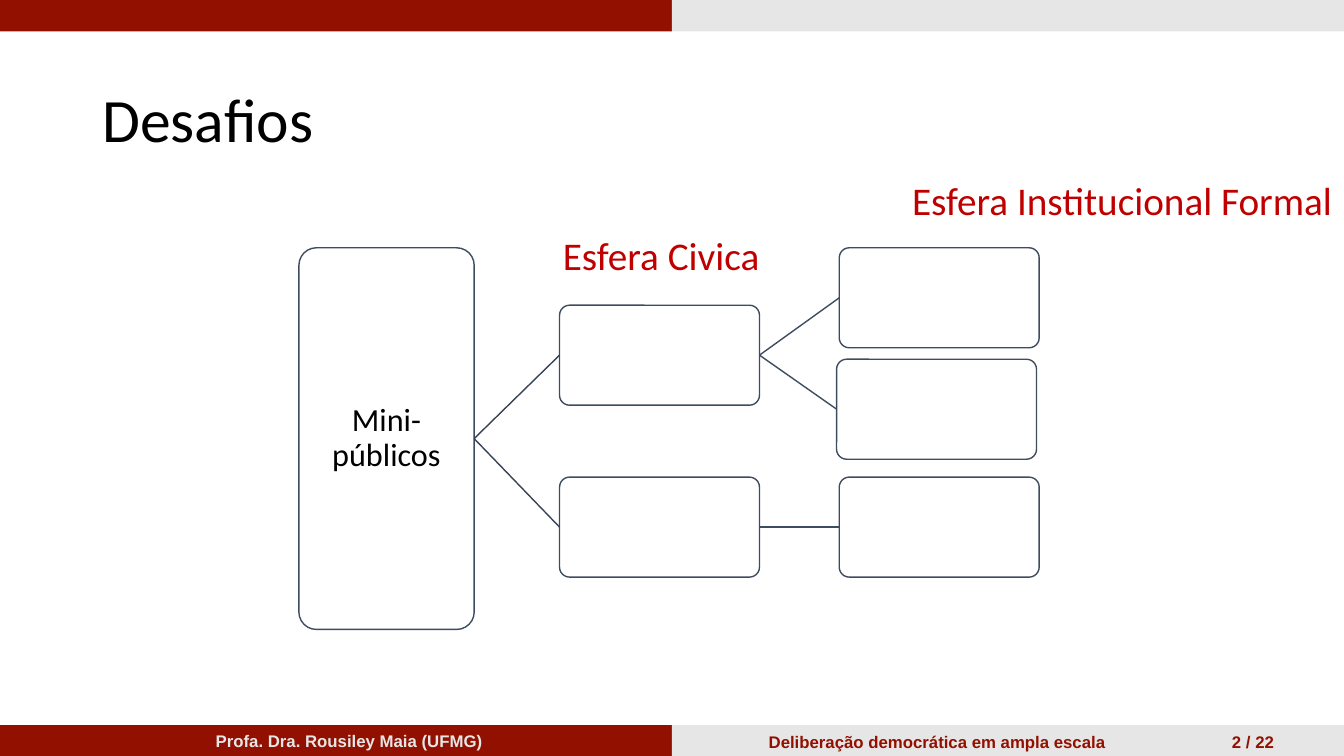
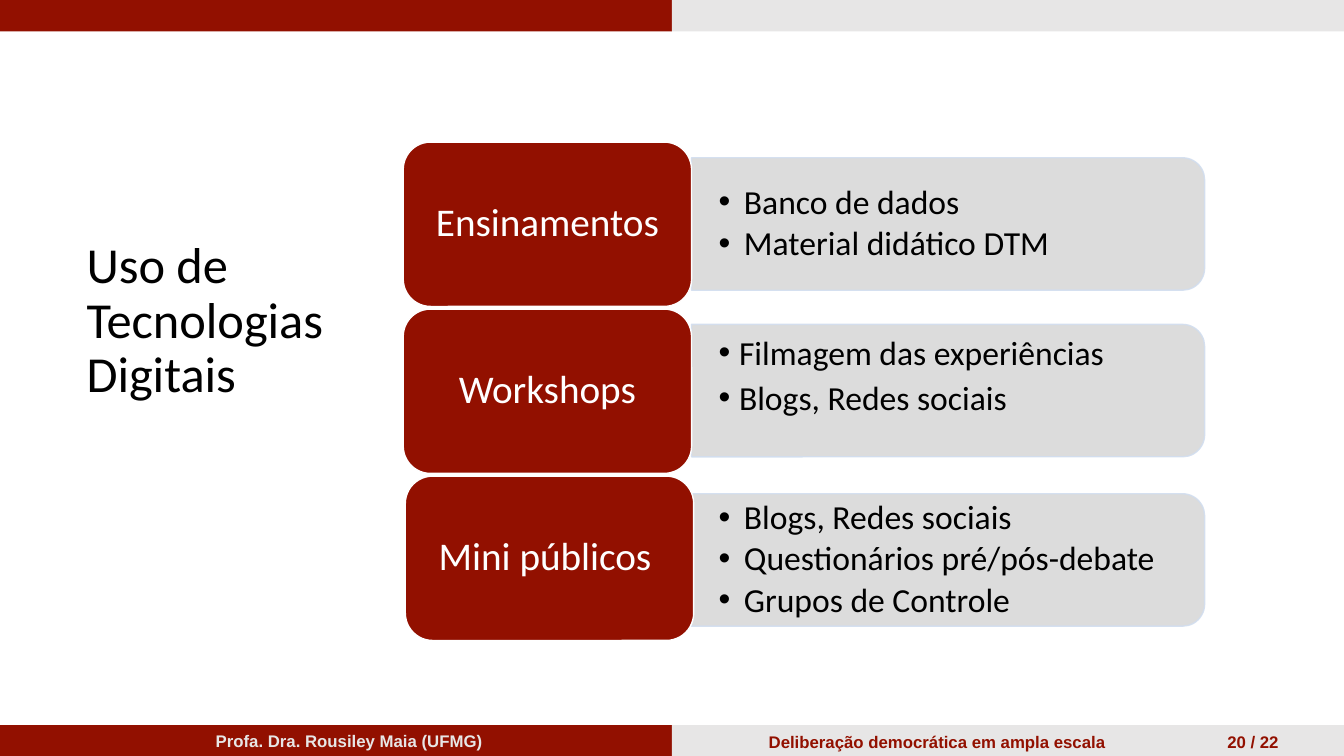
from dataclasses import dataclass

from lxml import etree
from pptx import Presentation
from pptx.dml.color import RGBColor
from pptx.enum.shapes import MSO_CONNECTOR, MSO_SHAPE
from pptx.enum.text import MSO_ANCHOR, PP_ALIGN
from pptx.oxml.ns import qn
from pptx.util import Pt

RECT = MSO_SHAPE.RECTANGLE
ROUND = MSO_SHAPE.ROUNDED_RECTANGLE
TAB = MSO_SHAPE.ROUND_2_SAME_RECTANGLE
LINE = MSO_CONNECTOR.STRAIGHT
LEFT, MID = PP_ALIGN.LEFT, PP_ALIGN.CENTER
TOP, CENTER = MSO_ANCHOR.TOP, MSO_ANCHOR.MIDDLE
LEFT_SITE, RIGHT_SITE = 1, 3


@dataclass(frozen=True)
class Theme:
    wine: str = "921000"
    pale: str = "E7E6E6"
    panel: str = "D9D9D9"
    edge: str = "D2DEEF"
    slate: str = "3E4C60"
    dark: str = "364355"
    accent: str = "C00000"
    white: str = "FFFFFF"
    black: str = "000000"
    body: str = "Calibri"
    foot: str = "Arial"
    title: float = 44
    side: float = 36
    label: float = 28
    item: float = 24
    node: float = 23
    small: float = 12


THEME = Theme()


def rgb(code):
    return RGBColor.from_string(code)


def fade(fill, share):
    color = fill._xPr.find(qn("a:solidFill"))[0]
    etree.SubElement(color, qn("a:alpha"), val=str(share * 1000))


def write(frame, text, *, size, color=THEME.black, font=THEME.body, bold=False,
          align=LEFT, anchor=TOP, wrap=True, inset=(7.2, 3.6),
          leading=1.0, gap=0, hang=0):
    frame.word_wrap = wrap
    frame.vertical_anchor = anchor
    frame.margin_left = frame.margin_right = Pt(inset[0])
    frame.margin_top = frame.margin_bottom = Pt(inset[1])
    for i, words in enumerate(text.split("\n")):
        para = frame.add_paragraph() if i else frame.paragraphs[0]
        para.alignment = align
        para.line_spacing = leading
        para.space_before = Pt(gap if i else 0)
        if hang:
            props = para._p.get_or_add_pPr()
            props.set("marL", str(Pt(hang)))
            props.set("indent", str(Pt(-hang)))
            etree.SubElement(props, qn("a:buFont"), typeface=THEME.foot)
            etree.SubElement(props, qn("a:buChar"), char="•")
        run = para.add_run()
        run.text = words
        run.font.size = Pt(size)
        run.font.name = font
        run.font.bold = bold
        run.font.color.rgb = rgb(color)


class Deck:
    def __init__(self, theme, total):
        self.theme, self.total = theme, total
        self.show = Presentation()
        self.show.slide_width, self.show.slide_height = Pt(960), Pt(540)
        self.slide = None

    def page(self, number):
        t = self.theme
        self.slide = self.show.slides.add_slide(self.show.slide_layouts[6])
        for y in (0, 518):
            for x, fill in ((0, t.wine), (480, t.pale)):
                self.shape(RECT, x, y, 480, 22.4 if y == 0 else 22, fill)
        notes = ((147, 518.4, 225, "Profa. Dra. Rousiley Maia (UFMG)", t.pale, LEFT),
                 (542, 519, 280, "Deliberação democrática em ampla escala", t.wine, LEFT),
                 (855, 519, 80, f"{number} / {self.total}", t.wine, MID))
        for x, y, w, words, color, align in notes:
            self.text(x, y, w, 21, words, size=t.small, color=color,
                      font=t.foot, bold=True, align=align)

    def shape(self, kind, x, y, w, h, fill, line=None, curve=None):
        item = self.slide.shapes.add_shape(kind, Pt(x), Pt(y), Pt(w), Pt(h))
        item.shadow.inherit = False
        item.fill.solid()
        item.fill.fore_color.rgb = rgb(fill)
        if line:
            item.line.color.rgb = rgb(line)
            item.line.width = Pt(1)
        else:
            item.line.fill.background()
        if curve is not None:
            item.adjustments[0] = curve
        return item

    def text(self, x, y, w, h, words, **style):
        box = self.slide.shapes.add_textbox(Pt(x), Pt(y), Pt(w), Pt(h))
        write(box.text_frame, words, **style)

    def title(self, x, y, w, words, size):
        self.text(x, y, w, 104.4, words, size=size, anchor=CENTER, leading=0.9)

    def node(self, x, y, w=142.8, h=71.4):
        t = self.theme
        return self.shape(ROUND, x, y, w, h, t.white, t.slate, 0.1)

    def link(self, start, end, color):
        line = self.slide.shapes.add_connector(LINE, 0, 0, 0, 0)
        line.begin_connect(start, RIGHT_SITE)
        line.end_connect(end, LEFT_SITE)
        line.line.color.rgb = rgb(color)
        line.line.width = Pt(1)
        etree.SubElement(line._element.spPr, qn("a:effectLst"))

    def panel(self, mid):
        t = self.theme
        long, short = 366.5, 94.6
        item = self.shape(TAB, 677.2 - short / 2, mid - long / 2,
                          short, long, t.panel, t.edge)
        item.rotation = 90
        fade(item.fill, 90)
        fade(item.line.fill, 90)

    def label(self, x, y, words):
        t = self.theme
        item = self.shape(ROUND, x, y, 206, 117.4, t.wine, t.white)
        write(item.text_frame, words, size=t.label, color=t.white, align=MID,
              anchor=CENTER, inset=(8.6, 4.3), leading=0.9)


def spheres(deck):
    t = deck.theme
    deck.page(2)
    deck.title(66, 35.3, 828, "Desafios", t.title)
    root = deck.node(213.5, 177, 125.2, 272.6)
    write(root.text_frame, "Mini-públicos", size=t.node, align=MID,
          anchor=CENTER, inset=(5, 5), leading=0.9)
    civic = [deck.node(399.7, y) for y in (218, 340.8)]
    formal = [deck.node(x, y) for x, y in ((599.5, 177), (597.6, 256.6), (599.5, 340.8))]
    for end in civic:
        deck.link(root, end, t.dark)
    for start, end in zip((civic[0], civic[0], civic[1]), formal):
        deck.link(start, end, t.slate)
    for x, y, w, words in ((395, 162, 163, "Esfera Civica"),
                           (644.4, 122.2, 315, "Esfera Institucional Formal")):
        deck.text(x, y, w, 41, words, size=t.label, color=t.accent, wrap=False)


def digital(deck):
    t = deck.theme
    deck.page(20)
    deck.title(54.7, 177.8, 260.6, "Uso de Tecnologias Digitais", t.side)
    rows = (
        (288, 160, 160, "Ensinamentos", 18, 0.9,
         "Banco de dados\nMaterial didático DTM"),
        (288, 279, 267.5, "Workshops", 14.5, 1.0,
         "Filmagem das experiências\nBlogs, Redes sociais"),
        (289.5, 400, 400, "Mini públicos ", 18, 0.9,
         "Blogs, Redes sociais\nQuestionários pré/pós-debate\nGrupos de Controle"),
    )
    for i, (x, mid, level, name, hang, leading, items) in enumerate(rows):
        deck.panel(mid)
        deck.text(494, level - 42.5, 361.4, 85, items, size=t.item,
                  anchor=CENTER, inset=(19.4, 0), leading=leading, gap=3.6, hang=hang)
        deck.label(x, 101.5 + 119.3 * i, name)


def main():
    deck = Deck(THEME, 22)
    spheres(deck)
    digital(deck)
    deck.show.save("out.pptx")


if __name__ == "__main__":
    main()
